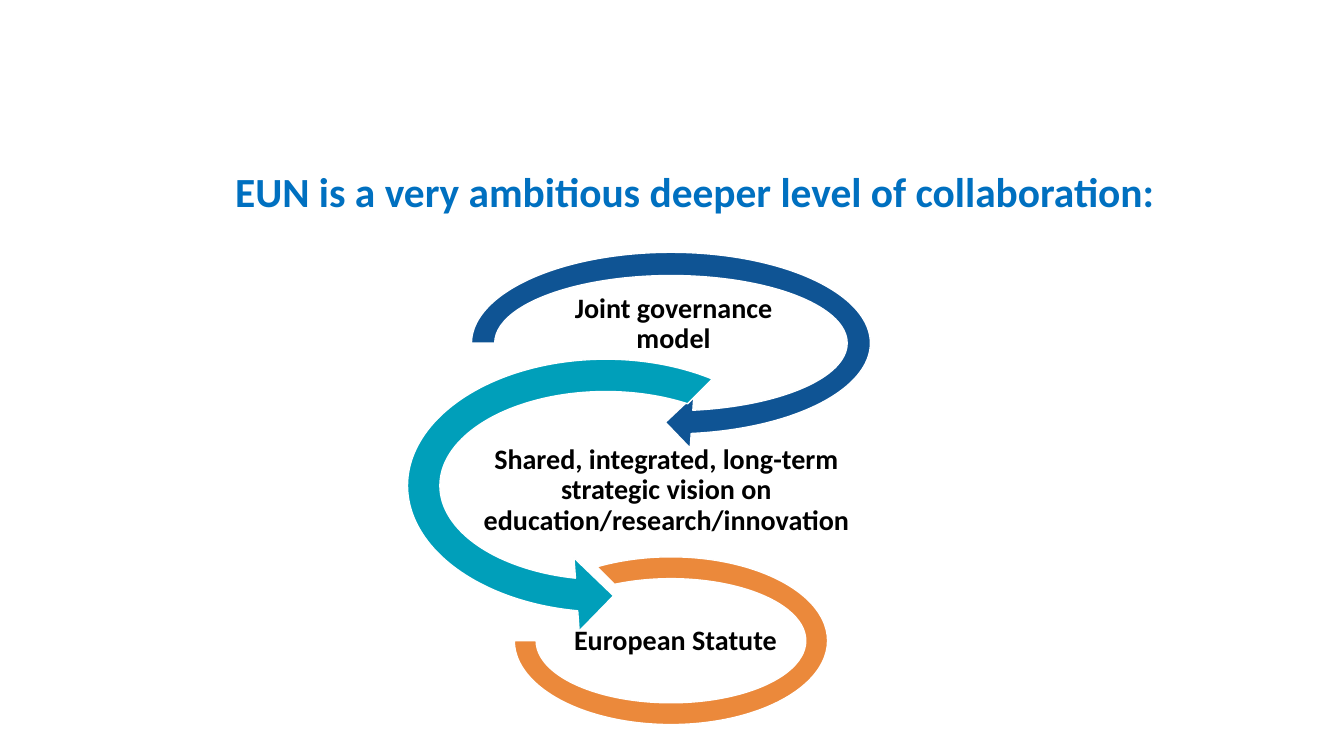
import pptx
import pptx.util
import pptx.dml.color
import pptx.enum.shapes
import pptx.enum.text

Inches = pptx.util.Inches
Pt = pptx.util.Pt
SHAPE = pptx.enum.shapes.MSO_SHAPE


def color(hex_value):
    return pptx.dml.color.RGBColor.from_string(hex_value)


def add_label(page, area, text, size, hex_value, inset_x, inset_y, spacing):
    box = page.shapes.add_textbox(*map(Inches, area))
    frame = box.text_frame
    frame.word_wrap = True
    frame.vertical_anchor = pptx.enum.text.MSO_ANCHOR.MIDDLE
    frame.margin_left = frame.margin_right = Inches(inset_x)
    frame.margin_top = frame.margin_bottom = Inches(inset_y)
    para = frame.paragraphs[0]
    para.alignment = pptx.enum.text.PP_ALIGN.CENTER
    para.line_spacing = spacing
    span = para.add_run()
    span.text = text
    span.font.name = "Calibri"
    span.font.size = Pt(size)
    span.font.bold = True
    span.font.color.rgb = color(hex_value)


deck = pptx.Presentation()
deck.slide_width = Inches(13.3)
deck.slide_height = Inches(7.48)
page = deck.slides.add_slide(deck.slide_layouts[6])

# Chain of arrows: shape, area, adjustments, fill, label, label area
steps = [
    (SHAPE.CIRCULAR_ARROW, (4.52, 2.35, 4.24, 2.09),
     (0.11, 11.42, 45, 108, 1 / 8), "0F5494",
     "Joint governance model", (5.57, 2.86, 2.19, 0.7)),
    (SHAPE.LEFT_CIRCULAR_ARROW, (3.83, 3.35, 4.33, 2.91),
     (0.11, 11.42, 63, 189, 1 / 8), "009FBA",
     "Shared, integrated, long-term strategic vision on education/research/innovation",
     (4.43, 4.36, 4.33, 0.99)),
    (SHAPE.BLOCK_ARC, (5.09, 5.51, 3.1, 1.66),
     (135, 108, 0.13), "EB893B",
     "European Statute", (5.66, 5.82, 2.05, 1.05)),
]
for kind, area, adjustments, fill, label, label_area in steps:
    arrow = page.shapes.add_shape(kind, *map(Inches, area))
    for index, value in enumerate(adjustments):
        arrow.adjustments[index] = value
    arrow.shadow.inherit = False
    arrow.fill.solid()
    arrow.fill.fore_color.rgb = color(fill)
    arrow.line.color.rgb = color("FFFFFF")
    arrow.line.width = Pt(1)
    add_label(page, label_area, label, 20, "000000", 0.01, 0.01, 0.9)

# Heading
add_label(page, (2.19, 1.23, 9.38, 1.32),
          "EUN is a very ambitious deeper level of collaboration:",
          29.5, "0070C0", 0.1, 0.05, 1.0)

deck.save("out.pptx")
